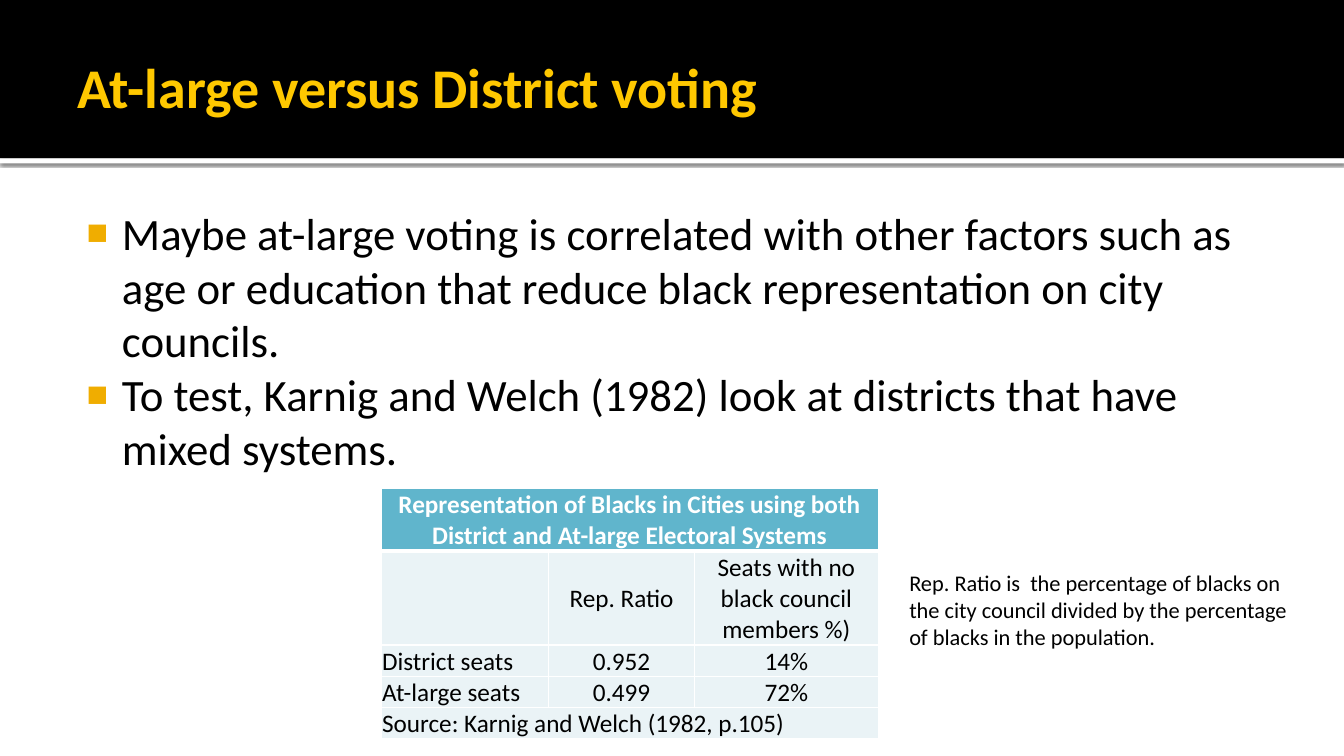
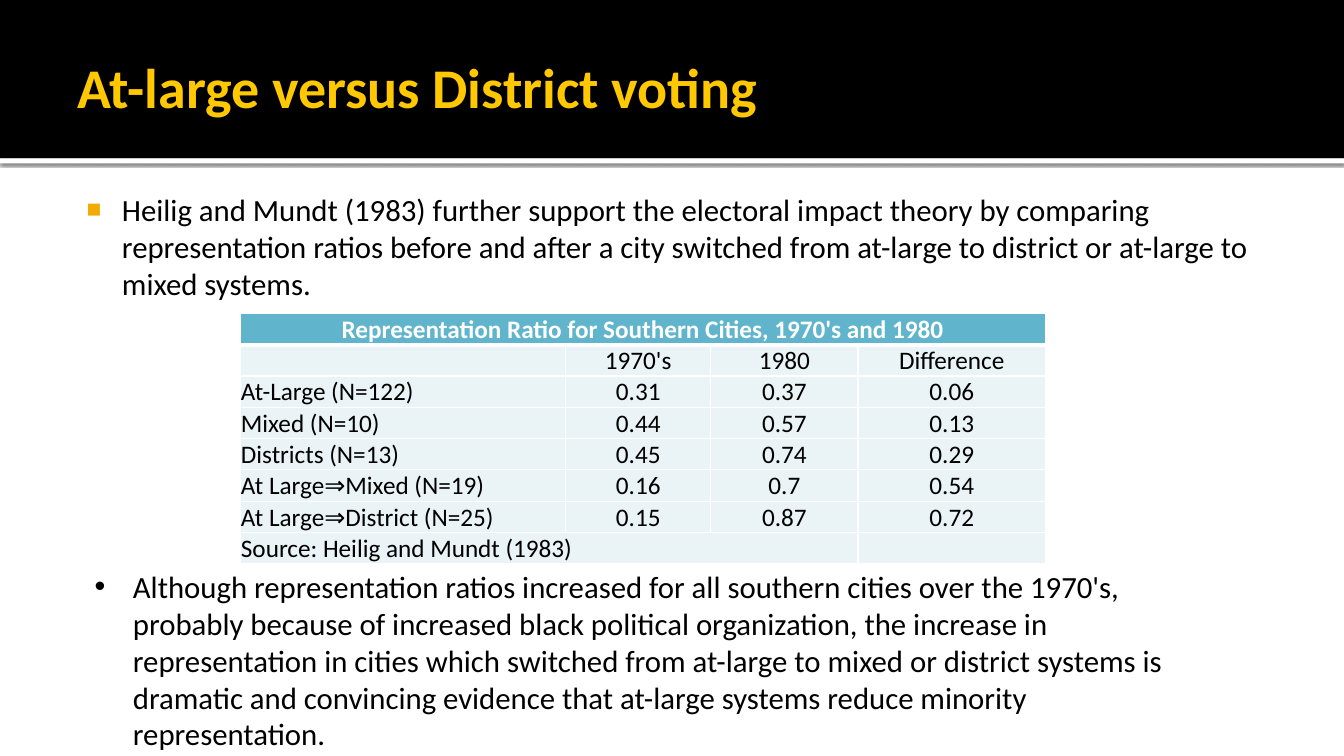
"""Build two slides on at-large versus district voting."""
from lxml import etree
from pptx import Presentation
from pptx.dml.color import RGBColor
from pptx.enum import shapes, text
from pptx.oxml import ns
from pptx.util import Inches, Pt

BLACK = RGBColor(0x00, 0x00, 0x00)
WHITE = RGBColor(0xFF, 0xFF, 0xFF)
TITLE_YELLOW = RGBColor(0xFF, 0xC8, 0x00)
BULLET_AMBER = RGBColor(0xF0, 0xAD, 0x00)
HEADER_BLUE = RGBColor(0x60, 0xB5, 0xCC)
CELL_BLUE = RGBColor(0xEA, 0xF3, 0xF6)

FONT = "Calibri"
SLIDE_WIDTH, SLIDE_HEIGHT = 13.33, 7.5
BAND_HEIGHT = 1.57
TITLE = "At-large versus District voting"
TABLE_LINE = 0.31
TITLE_INSETS = (0.1, 0.05, 0.05, 0.05)
BODY_INSETS = (0.06, 0.1, 0.1, 0.05)
NOTE_INSETS = (0.1, 0.05, 0.1, 0.05)
CELL_INSETS = (0.01, 0.01, 0.01, 0)


def add_xml(parent, tag, **attributes):
    """Append a drawing element and return it."""
    return etree.SubElement(
        parent, ns.qn(tag), {key: str(value) for key, value in attributes.items()})


def set_insets(holder, insets):
    """Set the left, top, right and bottom margins of a frame or cell."""
    (holder.margin_left, holder.margin_top,
     holder.margin_right, holder.margin_bottom) = map(Inches, insets)


def style_runs(paragraph, size, color=BLACK, bold=False):
    """Format every run of a paragraph."""
    for run in paragraph.runs:
        font = run.font
        font.name, font.size, font.bold = FONT, Pt(size), bold
        font.color.rgb = color


def add_bullet(paragraph, mark, left, color=None, percent=100, hang=None):
    """Give a paragraph a bullet and a hanging indent."""
    properties = paragraph._p.get_or_add_pPr()
    properties.set("marL", str(Inches(left)))
    properties.set("indent", str(-Inches(hang or left)))
    if color is not None:
        add_xml(add_xml(properties, "a:buClr"), "a:srgbClr", val=color)
    add_xml(properties, "a:buSzPct", val=percent * 1000)
    add_xml(properties, "a:buFont", typeface="Arial")
    add_xml(properties, "a:buChar", char=mark)


def add_text(slide, box, lines, size, insets=NOTE_INSETS, color=BLACK, bold=False,
             anchor=text.MSO_ANCHOR.TOP, bullet=None):
    """Add a wrapped text box with one paragraph per line."""
    frame = slide.shapes.add_textbox(*map(Inches, box)).text_frame
    frame.word_wrap = True
    frame.vertical_anchor = anchor
    set_insets(frame, insets)
    frame.text = "\n".join(lines)
    for paragraph in frame.paragraphs:
        style_runs(paragraph, size, color, bold)
        if bullet:
            add_bullet(paragraph, **bullet)
    return frame


def add_body(slide, box, lines, size):
    """Add main text with square amber bullets."""
    square = dict(mark="■", left=0.48, hang=0.35, color=BULLET_AMBER, percent=80)
    add_text(slide, box, lines, size, BODY_INSETS, bullet=square)


def add_band(slide, top, height, color):
    """Add a full-width band."""
    band = slide.shapes.add_shape(
        shapes.MSO_SHAPE.RECTANGLE, 0, Inches(top), Inches(SLIDE_WIDTH), Inches(height))
    band.shadow.inherit = False
    band.fill.solid()
    band.fill.fore_color.rgb = color
    band.line.fill.background()
    return band


def add_titled_slide(deck):
    """Add a slide with the shared bands and title."""
    slide = deck.slides.add_slide(deck.slide_layouts[6])
    rule = add_band(slide, BAND_HEIGHT, 0.05, WHITE)
    effects = rule._element.spPr.find(ns.qn("a:effectLst"))
    shadow = add_xml(effects, "a:outerShdw", blurRad=Pt(2.5), dist=Pt(0.8),
                     dir=90 * 60000, algn="tl", rotWithShape=0)
    add_xml(add_xml(shadow, "a:srgbClr", val=BLACK), "a:alpha", val=60000)
    add_band(slide, 0, BAND_HEIGHT, BLACK)
    add_text(slide, (0.67, 0.17, 12, 1.37), [TITLE], 40, TITLE_INSETS,
             TITLE_YELLOW, True, text.MSO_ANCHOR.MIDDLE)
    return slide


def set_borders(cell, top, bottom):
    """Draw white borders around a cell."""
    properties = cell._tc.get_or_add_tcPr()
    widths = {"a:lnL": 1, "a:lnR": 1, "a:lnT": top, "a:lnB": bottom}
    for place, (tag, width) in enumerate(widths.items()):
        border = add_xml(properties, tag, w=Pt(width))
        add_xml(add_xml(border, "a:solidFill"), "a:srgbClr", val=WHITE)
        properties.insert(place, border)


def style_cell(cell, row, centered, anchor):
    """Apply the fill, borders and text style of a table cell."""
    header = row == 0
    cell.fill.solid()
    cell.fill.fore_color.rgb = HEADER_BLUE if header else CELL_BLUE
    set_borders(cell, 3 if row == 1 else 1, 3 if header else 1)
    set_insets(cell, CELL_INSETS)
    cell.vertical_anchor = anchor
    paragraph = cell.text_frame.paragraphs[0]
    paragraph.alignment = text.PP_ALIGN.CENTER if centered else text.PP_ALIGN.LEFT
    style_runs(paragraph, 18, WHITE if header else BLACK, header)


def add_ratio_table(slide, left, top, widths, heading, rows, source, line_counts,
                    label_anchor=text.MSO_ANCHOR.BOTTOM):
    """Add a table with a merged heading and a source row three columns wide."""
    contents = [[heading], *rows, [source]]
    height = TABLE_LINE * sum(line_counts)
    table = slide.shapes.add_table(
        len(contents), len(widths), Inches(left), Inches(top),
        Inches(sum(widths)), Inches(height)).table
    table.first_row = table.horz_banding = False
    for column, width in zip(table.columns, widths):
        column.width = Inches(width)
    for row, (values, lines) in enumerate(zip(contents, line_counts)):
        table.rows[row].height = Inches(TABLE_LINE * lines)
        anchor = label_anchor if row == 1 else text.MSO_ANCHOR.BOTTOM
        for column in range(len(widths)):
            cell = table.cell(row, column)
            if column < len(values):
                cell.text = values[column]
            style_cell(cell, row, row == 0 or column > 0, anchor)
    last = len(contents) - 1
    table.cell(0, 0).merge(table.cell(0, len(widths) - 1))
    table.cell(last, 0).merge(table.cell(last, 2))


def add_mixed_systems_slide(deck):
    """Add the slide on cities that use both systems."""
    slide = add_titled_slide(deck)
    add_body(slide, (0.67, 1.94, 12, 2.73), [
        "Maybe at-large voting is correlated with other factors such as age or "
        "education that reduce black representation on city councils.",
        "To test, Karnig and Welch (1982) look at districts that have mixed systems.",
    ], 32)
    add_ratio_table(
        slide, 3.78, 4.85, (1.66, 1.45, 1.82),
        "Representation of Blacks in Cities using both District and At-large "
        "Electoral Systems",
        [["", "Rep. Ratio", "Seats with no black council members %)"],
         ["District seats", "0.952", "14%"],
         ["At-large seats", "0.499", "72%"]],
        "Source: Karnig and Welch (1982, p.105)",
        (2, 3, 1, 1, 1), text.MSO_ANCHOR.MIDDLE)
    add_text(slide, (8.92, 5.6, 4.06, 0.91), [
        "Rep. Ratio is  the percentage of blacks on the city council divided by "
        "the percentage of blacks in the population."], 16)


def add_switched_systems_slide(deck):
    """Add the slide on cities that switched systems."""
    slide = add_titled_slide(deck)
    add_body(slide, (0.67, 1.79, 12.31, 0.94), [
        "Heilig and Mundt (1983) further support the electoral impact theory by "
        "comparing representation ratios before and after a city switched from "
        "at-large to district or at-large to mixed systems."], 22)
    add_ratio_table(
        slide, 2.38, 3.11, (3.23, 1.44, 1.46, 1.86),
        "Representation Ratio for Southern Cities, 1970's and 1980",
        [["", "1970's", "1980", "Difference"],
         ["At-Large (N=122)", "0.31", "0.37", "0.06"],
         ["Mixed (N=10)", "0.44", "0.57", "0.13"],
         ["Districts (N=13)", "0.45", "0.74", "0.29"],
         ["At Large⇒Mixed (N=19)", "0.16", "0.7", "0.54"],
         ["At Large⇒District (N=25)", "0.15", "0.87", "0.72"]],
        "Source: Heilig and Mundt (1983)", (1,) * 8)
    add_text(slide, (0.84, 5.58, 11.08, 2.26), [
        "Although representation ratios increased for all southern cities over the "
        "1970's, probably because of increased black political organization, the "
        "increase in representation in cities which switched from at-large to mixed "
        "or district systems is dramatic and convincing evidence that at-large "
        "systems reduce minority representation."], 22,
        bullet=dict(mark="•", left=0.38))


def main():
    """Build and save the presentation."""
    deck = Presentation()
    deck.slide_width, deck.slide_height = Inches(SLIDE_WIDTH), Inches(SLIDE_HEIGHT)
    add_mixed_systems_slide(deck)
    add_switched_systems_slide(deck)
    deck.save("out.pptx")


if __name__ == "__main__":
    main()
